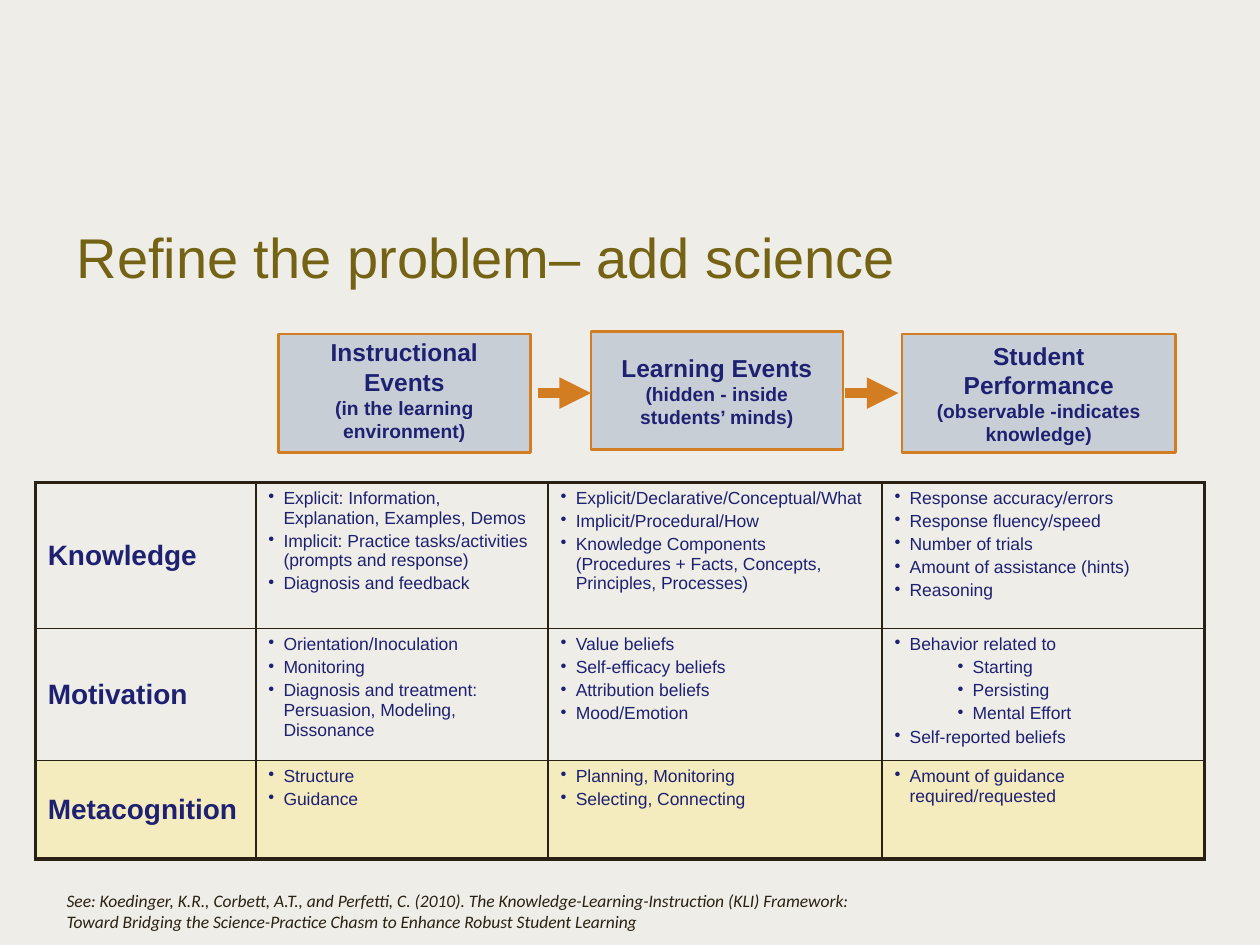
import pptx
import pptx.dml.color
import pptx.enum.shapes
import pptx.enum.text
import pptx.oxml.ns
import pptx.util
from dataclasses import dataclass
from lxml import etree

Inches = pptx.util.Inches
Pt = pptx.util.Pt
qn = pptx.oxml.ns.qn
ALIGN = pptx.enum.text.PP_ALIGN
ANCHOR = pptx.enum.text.MSO_ANCHOR


@dataclass
class Theme:
    background: str = "EFEDE7"
    title: str = "746314"
    text: str = "1E2172"
    dark: str = "292113"
    accent: str = "D27D22"
    box: str = "C8CED6"
    highlight: str = "F4EBBF"
    font: str = "Arial"
    citation_font: str = "Calibri"
    title_size: int = 32
    row_size: int = 16
    heading_size: int = 14
    detail_size: int = 11
    body_size: int = 10
    outer_line: float = 2.25
    inner_line: float = 1
    box_line: float = 1.5
    arrow_line: float = 6


THEME = Theme()

TITLE = "Refine the problem– add science"
CITATION = (
    "See: Koedinger, K.R., Corbett, A.T., and Perfetti, C. (2010). "
    "The Knowledge-Learning-Instruction (KLI) Framework: Toward Bridging the "
    "Science-Practice Chasm to Enhance Robust Student Learning"
)

STAGES = [
    (2.21, 2.65, 2, 0, ["Instructional Events"], "(in the learning environment)"),
    (4.69, 2.63, 2, 0.05, ["Learning Events"], "(hidden - inside students’ minds)"),
    (7.16, 2.65, 2.17, 0.05, ["Student", "Performance"], "(observable -indicates knowledge)"),
]
STAGE_HEIGHT = 0.94
ARROWS = [(4.27, 4.69), (6.71, 7.13)]
ARROW_Y = 3.12

TABLE_LEFT, TABLE_TOP = 0.28, 3.83
COLUMN_WIDTHS = [1.75, 2.32, 2.65, 2.56]
ROW_HEIGHTS = [1.16, 0.98, 0.78]
HIGHLIGHTED_ROW = 2
ROWS = [
    ("Knowledge", [
        ["Explicit: Information, Explanation, Examples, Demos",
         "Implicit: Practice tasks/activities (prompts and response)",
         "Diagnosis and feedback"],
        ["Explicit/Declarative/Conceptual/What",
         "Implicit/Procedural/How",
         "Knowledge Components\v(Procedures + Facts, Concepts, Principles, Processes)"],
        ["Response accuracy/errors", "Response fluency/speed", "Number of trials",
         "Amount of assistance (hints)", "Reasoning"],
    ]),
    ("Motivation", [
        ["Orientation/Inoculation", "Monitoring",
         "Diagnosis and treatment: Persuasion, Modeling, Dissonance"],
        ["Value beliefs", "Self-efficacy beliefs", "Attribution beliefs", "Mood/Emotion"],
        ["Behavior related to", ["Starting", "Persisting", "Mental Effort"],
         "Self-reported beliefs"],
    ]),
    ("Metacognition", [
        ["Structure", "Guidance"],
        ["Planning, Monitoring", "Selecting, Connecting"],
        ["Amount of guidance required/requested"],
    ]),
]


def rgb(value):
    return pptx.dml.color.RGBColor.from_string(value)


def format_paragraph(paragraph, size, color=THEME.text, font=THEME.font, bold=False, italic=False):
    for run in paragraph.runs:
        run.font.name = font
        run.font.size = Pt(size)
        run.font.color.rgb = rgb(color)
        run.font.bold = bold
        run.font.italic = italic


def add_text(slide, left, top, width, height, text, **style):
    shape = slide.shapes.add_textbox(Inches(left), Inches(top), Inches(width), Inches(height))
    text_frame = shape.text_frame
    text_frame.word_wrap = True
    text_frame.vertical_anchor = ANCHOR.MIDDLE
    text_frame.text = text
    format_paragraph(text_frame.paragraphs[0], **style)


def add_stage(slide, left, top, width, top_margin, headings, detail):
    shape = slide.shapes.add_shape(
        pptx.enum.shapes.MSO_SHAPE.ROUNDED_RECTANGLE,
        Inches(left), Inches(top), Inches(width), Inches(STAGE_HEIGHT))
    shape.adjustments[0] = 0
    shape.shadow.inherit = False
    shape.fill.solid()
    shape.fill.fore_color.rgb = rgb(THEME.box)
    shape.line.color.rgb = rgb(THEME.accent)
    shape.line.width = Pt(THEME.box_line)
    text_frame = shape.text_frame
    text_frame.word_wrap = True
    text_frame.margin_top = Inches(top_margin)
    text_frame.vertical_anchor = ANCHOR.MIDDLE
    text_frame.text = "\n".join(headings + [detail])
    for index, paragraph in enumerate(text_frame.paragraphs):
        size = THEME.heading_size if index < len(headings) else THEME.detail_size
        paragraph.alignment = ALIGN.CENTER
        format_paragraph(paragraph, size, bold=True)


def add_arrow(slide, start, end):
    connector = slide.shapes.add_connector(
        pptx.enum.shapes.MSO_CONNECTOR.STRAIGHT,
        Inches(start), Inches(ARROW_Y), Inches(end), Inches(ARROW_Y))
    connector.line.color.rgb = rgb(THEME.accent)
    connector.line.width = Pt(THEME.arrow_line)
    etree.SubElement(connector.line._get_or_add_ln(), qn("a:tailEnd"), type="triangle")
    etree.SubElement(connector._element.spPr, qn("a:effectLst"))


def set_borders(cell, row, column):
    outer_edges = {
        "a:lnL": column == 0,
        "a:lnR": column == len(COLUMN_WIDTHS) - 1,
        "a:lnT": row == 0,
        "a:lnB": row == len(ROW_HEIGHTS) - 1,
    }
    properties = cell._tc.get_or_add_tcPr()
    for edge, is_outer in outer_edges.items():
        width = Pt(THEME.outer_line if is_outer else THEME.inner_line)
        line = etree.SubElement(properties, qn(edge), w=str(width))
        fill = etree.SubElement(line, qn("a:solidFill"))
        etree.SubElement(fill, qn("a:srgbClr"), val=THEME.dark)


def fill_bullets(cell, items):
    leveled = []
    for item in items:
        leveled += [(1, child) for child in item] if isinstance(item, list) else [(0, item)]
    text_frame = cell.text_frame
    for index, (level, text) in enumerate(leveled):
        paragraph = text_frame.add_paragraph() if index else text_frame.paragraphs[0]
        paragraph.text = text
        paragraph.level = level
        properties = paragraph._p.get_or_add_pPr()
        properties.set("marL", str(Inches(0.12 + 0.5 * level)))
        properties.set("indent", str(Inches(-0.12)))
        etree.SubElement(properties, qn("a:buChar"), char="•")
        if index:
            paragraph.space_before = Pt(2)
        format_paragraph(paragraph, THEME.body_size)


def add_matrix(slide):
    table = slide.shapes.add_table(
        len(ROW_HEIGHTS), len(COLUMN_WIDTHS), Inches(TABLE_LEFT), Inches(TABLE_TOP),
        Inches(sum(COLUMN_WIDTHS)), Inches(sum(ROW_HEIGHTS))).table
    table.first_row = False
    table.horz_banding = False
    for column, width in zip(table.columns, COLUMN_WIDTHS):
        column.width = Inches(width)
    for row_index, (label, bullet_lists) in enumerate(ROWS):
        table.rows[row_index].height = Inches(ROW_HEIGHTS[row_index])
        for column_index in range(len(COLUMN_WIDTHS)):
            cell = table.cell(row_index, column_index)
            set_borders(cell, row_index, column_index)
            if row_index == HIGHLIGHTED_ROW:
                cell.fill.solid()
                cell.fill.fore_color.rgb = rgb(THEME.highlight)
            else:
                cell.fill.background()
            if column_index:
                fill_bullets(cell, bullet_lists[column_index - 1])
            else:
                cell.text_frame.text = label
                cell.vertical_anchor = ANCHOR.MIDDLE
                format_paragraph(cell.text_frame.paragraphs[0], THEME.row_size, bold=True)


def main():
    presentation = pptx.Presentation()
    presentation.slide_width = Inches(10)
    presentation.slide_height = Inches(7.5)
    slide = presentation.slides.add_slide(presentation.slide_layouts[6])
    slide.background.fill.solid()
    slide.background.fill.fore_color.rgb = rgb(THEME.background)
    add_text(slide, 0.51, 1.62, 8.92, 0.83, TITLE, size=THEME.title_size, color=THEME.title)
    for stage in STAGES:
        add_stage(slide, *stage)
    for arrow in ARROWS:
        add_arrow(slide, *arrow)
    add_matrix(slide)
    add_text(slide, 0.43, 7.01, 6.69, 0.44, CITATION, size=THEME.body_size,
             color=THEME.dark, font=THEME.citation_font, italic=True)
    presentation.save("out.pptx")


if __name__ == "__main__":
    main()
